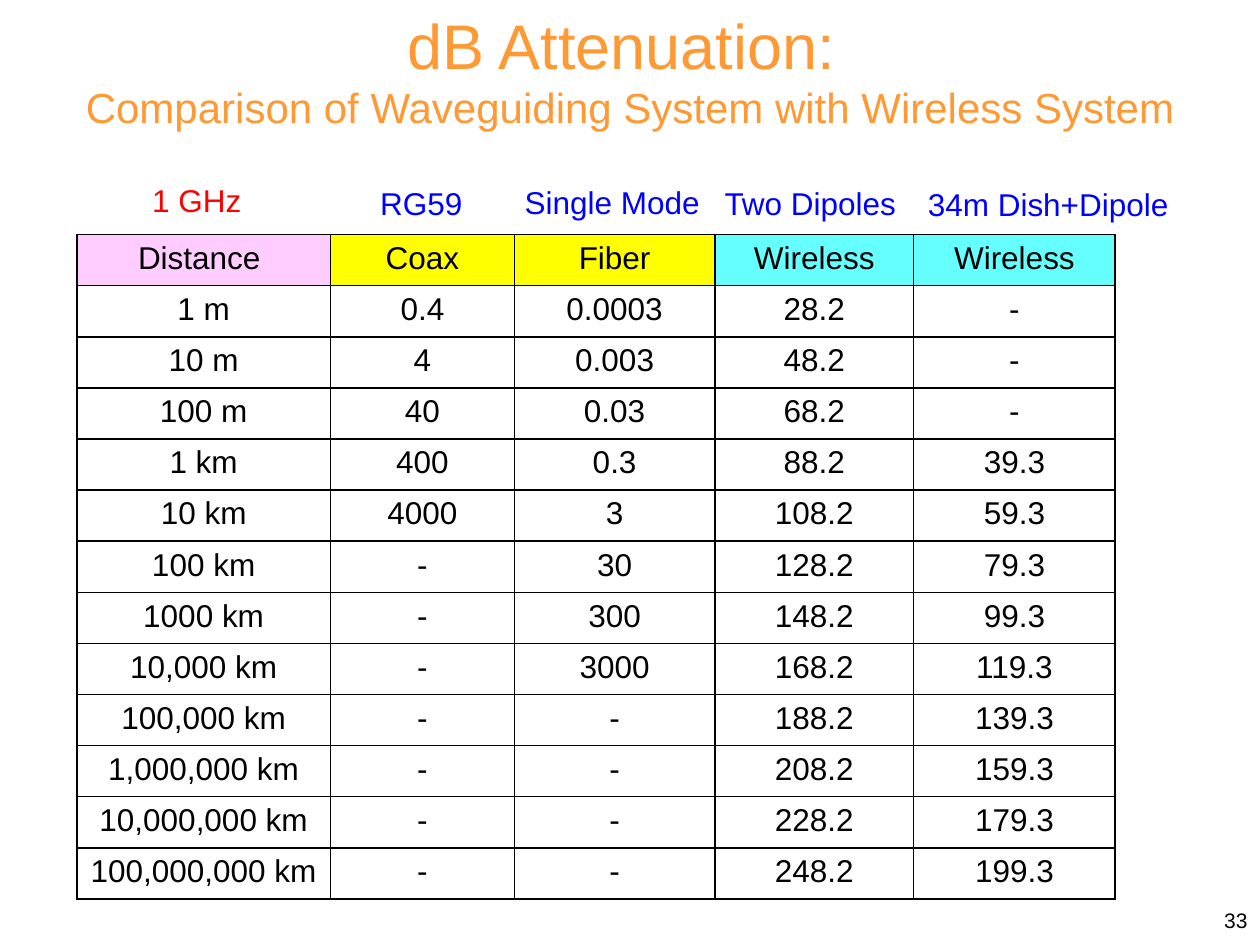
from lxml import etree
from pptx import Presentation
from pptx.dml.color import RGBColor
from pptx.enum.text import MSO_ANCHOR, PP_ALIGN
from pptx.oxml.ns import qn
from pptx.util import Cm, Pt

LEFT, CENTER, RIGHT = PP_ALIGN.LEFT, PP_ALIGN.CENTER, PP_ALIGN.RIGHT
TOP, MIDDLE = MSO_ANCHOR.TOP, MSO_ANCHOR.MIDDLE
TITLE_ONLY = 5

COLORS = {
    "orange": "FF9933", "black": "000000", "blue": "0000FF", "red": "FF0000",
    "pink": "FFCCFF", "yellow": "FFFF00", "cyan": "66FFFF",
}


def write(paragraph, text, size, color, align):
    paragraph.alignment = align
    run = paragraph.add_run()
    run.text = text
    for name, value in {"size": Pt(size), "name": "Arial"}.items():
        setattr(run.font, name, value)
    run.font.color.rgb = RGBColor.from_string(COLORS[color])


def add_border(cell, side):
    line = etree.SubElement(cell._tc.get_or_add_tcPr(), qn(f"a:{side}"), w=str(Pt(1)))
    fill = etree.SubElement(line, qn("a:solidFill"))
    etree.SubElement(fill, qn("a:srgbClr"), val=COLORS["black"])


prs = Presentation()
prs.slide_width, prs.slide_height = Cm(25.4), Cm(19.05)
slide = prs.slides.add_slide(prs.slide_layouts[TITLE_ONLY])

title = slide.shapes.title
title_place = {"left": 0, "top": 0, "width": 25.4, "height": 2.82}
for name, value in title_place.items():
    setattr(title, name, Cm(value))
heading = title.text_frame
heading.vertical_anchor = TOP
write(heading.paragraphs[0], "dB Attenuation: ", 36, "orange", CENTER)
write(heading.add_paragraph(), "Comparison of Waveguiding System with Wireless System",
      24, "orange", CENTER)

column_widths = [5.11, 3.71, 4.04, 4.01, 4.06]
header_fills = ["pink", "yellow", "yellow", "cyan", "cyan"]
attenuation = [
    ["Distance ", "Coax", "Fiber", "Wireless", "Wireless"],
    ["1 m", "0.4", "0.0003", "28.2", "-"],
    ["10 m", "4", "0.003", "48.2", "-"],
    ["100 m", "40", "0.03", "68.2", "-"],
    ["1 km", "400", "0.3", "88.2", "39.3"],
    ["10 km", "4000", "3", "108.2", "59.3"],
    ["100 km", "-", "30", "128.2", "79.3"],
    ["1000 km", "-", "300", "148.2", "99.3"],
    ["10,000 km", "-", "3000", "168.2", "119.3"],
    ["100,000 km", "-", "-", "188.2", "139.3"],
    ["1,000,000 km", "-", "-", "208.2", "159.3"],
    ["10,000,000 km", "-", "-", "228.2", "179.3"],
    ["100,000,000 km", "-", "-", "248.2", "199.3"],
]
row_height = 1.03
table = slide.shapes.add_table(
    len(attenuation), len(column_widths), Cm(1.55), Cm(4.73),
    Cm(sum(column_widths)), Cm(row_height * len(attenuation))).table
for name, value in {"first_row": False, "horz_banding": False}.items():
    setattr(table, name, value)
for column, width in zip(table.columns, column_widths):
    column.width = Cm(width)
for row_number, values in enumerate(attenuation):
    table.rows[row_number].height = Cm(row_height)
    for column_number, value in enumerate(values):
        cell = table.cell(row_number, column_number)
        write(cell.text_frame.paragraphs[0], value, 18, "black", CENTER)
        for side in ("lnL", "lnR", "lnT", "lnB"):
            add_border(cell, side)
        if row_number == 0:
            cell.fill.solid()
            cell.fill.fore_color.rgb = RGBColor.from_string(COLORS[header_fills[column_number]])
        else:
            cell.fill.background()

labels = [
    ("1 GHz", 2.82, 3.53, 2.34, 18, "red", LEFT, TOP, False),
    ("RG59", 7.21, 3.58, 2.57, 18, "blue", CENTER, TOP, True),
    ("Single Mode", 10.31, 3.56, 4.06, 18, "blue", CENTER, TOP, False),
    ("Two Dipoles", 14.33, 3.58, 4.01, 18, "blue", CENTER, TOP, False),
    ("34m Dish+Dipole", 18.36, 3.61, 5.54, 18, "blue", CENTER, TOP, True),
    ("33", 19.48, 18.03, 5.92, 12, "black", RIGHT, MIDDLE, True),
]
for text, left, top, width, size, color, align, anchor, wrap in labels:
    label = slide.shapes.add_textbox(Cm(left), Cm(top), Cm(width), Cm(1.02)).text_frame
    for name, value in {"word_wrap": wrap, "vertical_anchor": anchor}.items():
        setattr(label, name, value)
    write(label.paragraphs[0], text, size, color, align)

prs.save("out.pptx")
